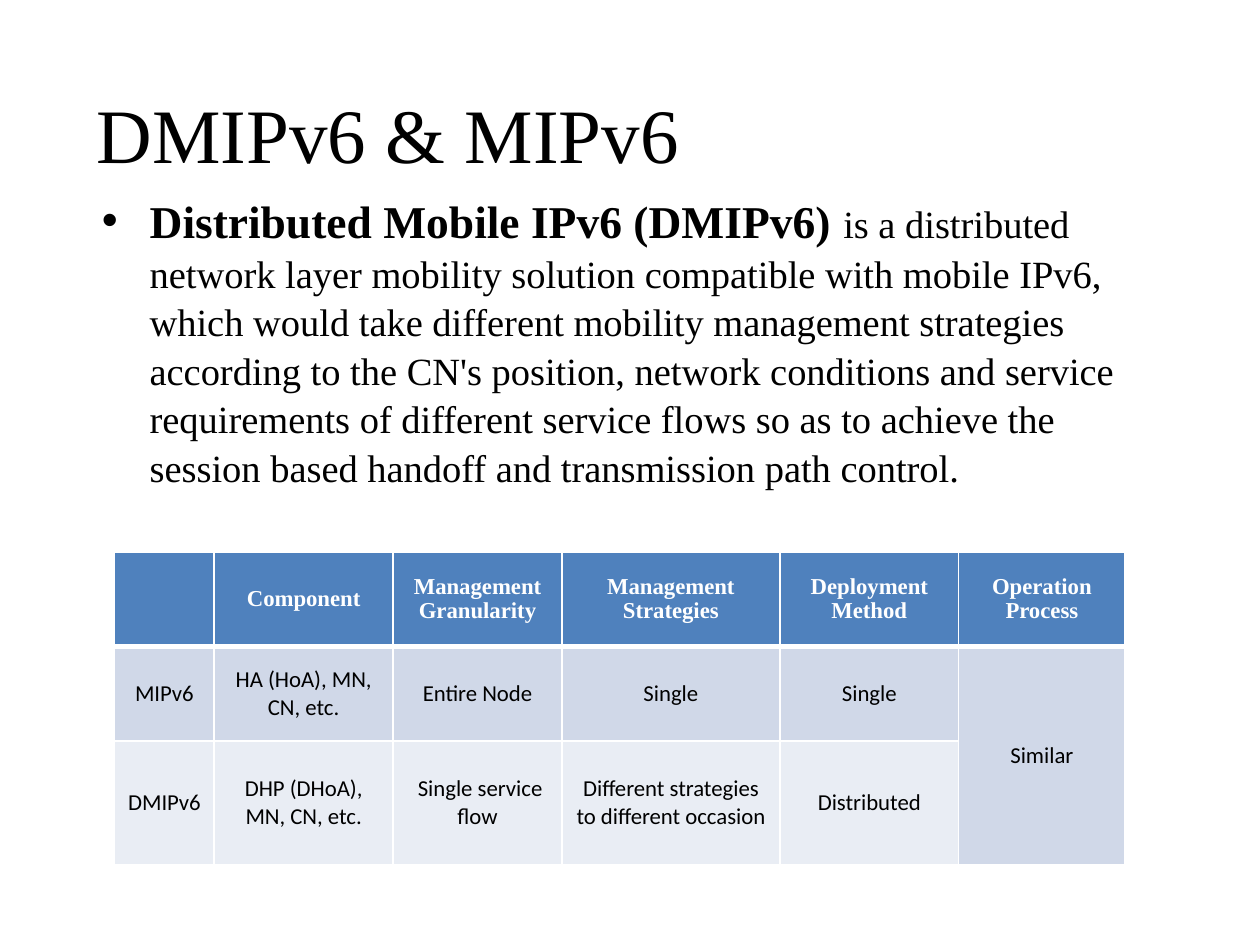
from lxml.etree import SubElement
from pptx import Presentation
from pptx.dml.color import RGBColor
from pptx.enum.text import MSO_ANCHOR as Anchor, PP_ALIGN as Align
from pptx.oxml.ns import qn
from pptx.util import Pt

PX = 9144  # 100 px to the inch
COLORS = {
    "text": "000000",
    "white": "FFFFFF",
    "header": "4F81BD",
    "band_dark": "D0D8E8",
    "band_light": "E9EDF4",
}
SERIF, SANS = "Times New Roman", "Calibri"

COLUMN_WIDTHS = [79, 142, 134, 173, 142, 132]
ROW_HEIGHTS = [75, 75, 98]
ROW_FILLS = ["header", "band_dark", "band_light"]
COMPARISON = [
    ["", "Component", "Management Granularity", "Management Strategies",
     "Deployment Method", "Operation Process"],
    ["MIPv6", "HA (HoA), MN, CN, etc.", "Entire Node", "Single", "Single", "Similar"],
    ["DMIPv6", "DHP (DHoA), MN, CN, etc.", " Single service flow",
     "Different strategies to different occasion", "Distributed", ""],
]


def rgb(name):
    return RGBColor.from_string(COLORS[name])


def add_run(paragraph, text, font=SERIF, size=22, bold=False, color="text"):
    run = paragraph.add_run()
    run.text = text
    run.font.name, run.font.size, run.font.bold = font, Pt(size), bold
    run.font.color.rgb = rgb(color)


def set_bullet(paragraph, indent):
    """Hang a round bullet to the left of the paragraph by indent px."""
    properties = paragraph._p.get_or_add_pPr()
    properties.set("marL", str(indent * PX))
    properties.set("indent", str(-indent * PX))
    SubElement(properties, qn("a:buFont"), typeface="Arial")
    SubElement(properties, qn("a:buChar"), char="•")


def set_borders(cell, top, bottom):
    """Draw white borders; top and bottom are widths in points."""
    properties = cell._tc.get_or_add_tcPr()
    edges = {"lnL": 1, "lnR": 1, "lnT": top, "lnB": bottom}
    for position, (edge, width) in enumerate(edges.items()):
        line = SubElement(properties, qn(f"a:{edge}"), w=str(Pt(width)))
        fill = SubElement(line, qn("a:solidFill"))
        SubElement(fill, qn("a:srgbClr"), val=COLORS["white"])
        properties.insert(position, line)  # borders come before the fill


class SlideBuilder:
    def __init__(self, slide):
        self.slide = slide

    def text_box(self, left, top, width, height, anchor=Anchor.TOP):
        """Add a wrapping text box and return its first paragraph."""
        box = self.slide.shapes.add_textbox(
            left * PX, top * PX, width * PX, height * PX)
        frame = box.text_frame
        frame.word_wrap = True
        frame.vertical_anchor = anchor
        return frame.paragraphs[0]

    def title(self, text):
        add_run(self.text_box(67, 60, 673, 90, Anchor.MIDDLE), text, size=44)

    def definition(self, term, meaning):
        paragraph = self.text_box(71, 146, 847, 239)
        paragraph.line_spacing = 1.05
        set_bullet(paragraph, 38)
        add_run(paragraph, term, size=26, bold=True)
        add_run(paragraph, meaning)

    def cell(self, cell, text, fill, row):
        cell.fill.solid()
        cell.fill.fore_color.rgb = rgb(fill)
        cell.vertical_anchor = Anchor.MIDDLE
        set_borders(cell, top=3 if row == 1 else 1, bottom=3 if row == 0 else 1)
        paragraph = cell.text_frame.paragraphs[0]
        paragraph.alignment = Align.CENTER
        if not text:
            return
        if row == 0:
            paragraph.line_spacing = 0.95
            add_run(paragraph, text, size=13, bold=True, color="white")
        else:
            add_run(paragraph, text, font=SANS, size=13)

    def table(self, left, top, rows):
        table = self.slide.shapes.add_table(
            len(rows), len(COLUMN_WIDTHS), left * PX, top * PX,
            sum(COLUMN_WIDTHS) * PX, sum(ROW_HEIGHTS) * PX).table
        for column, width in zip(table.columns, COLUMN_WIDTHS):
            column.width = width * PX
        for row, height in zip(table.rows, ROW_HEIGHTS):
            row.height = height * PX
        for r, (texts, fill) in enumerate(zip(rows, ROW_FILLS)):
            for c, text in enumerate(texts):
                self.cell(table.cell(r, c), text, fill, r)
        return table


def main():
    presentation = Presentation()
    presentation.slide_width, presentation.slide_height = 1000 * PX, 750 * PX
    builder = SlideBuilder(presentation.slides.add_slide(presentation.slide_layouts[6]))

    builder.title("DMIPv6 & MIPv6")
    builder.definition(
        "Distributed Mobile IPv6 (DMIPv6) ",
        "is a distributed network layer mobility solution compatible with mobile "
        "IPv6, which would take different mobility management strategies according "
        "to the CN's position, network conditions and service requirements of "
        "different service flows so as to achieve the session based handoff and "
        "transmission path control.")
    comparison = builder.table(91, 438, COMPARISON)
    comparison.cell(1, 5).merge(comparison.cell(2, 5))

    presentation.save("out.pptx")


if __name__ == "__main__":
    main()
